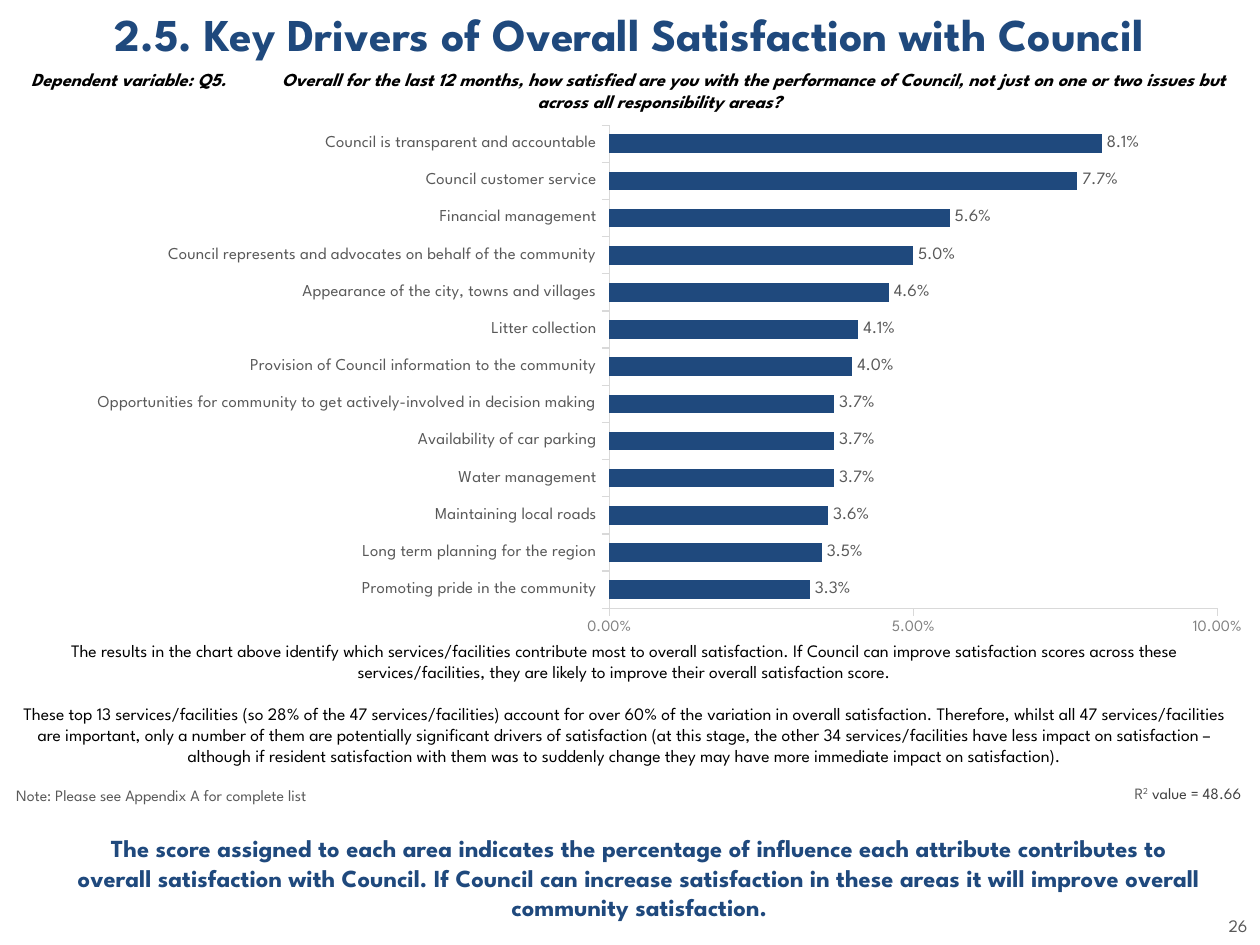
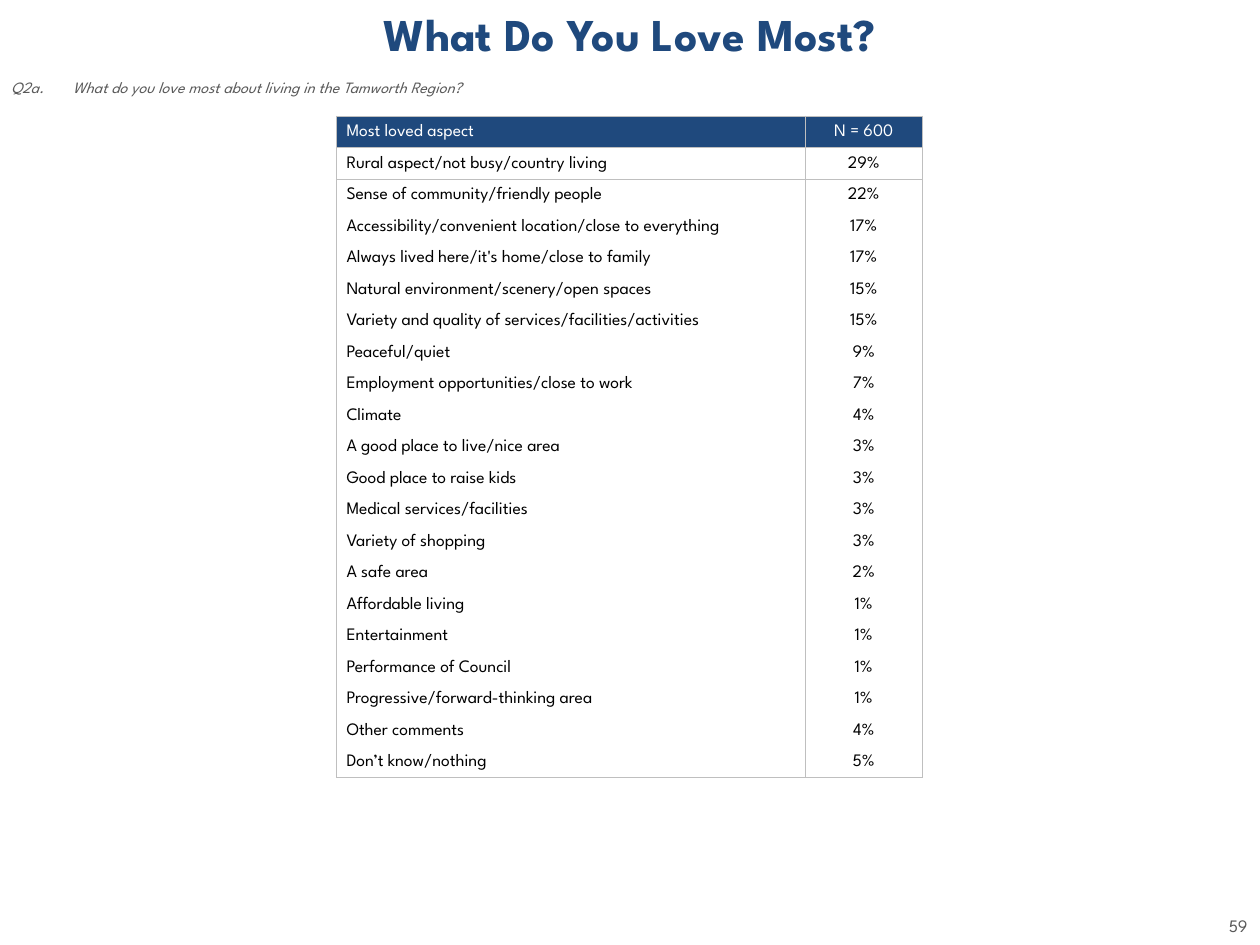
from dataclasses import dataclass
from typing import Any

from lxml import etree
from pptx import Presentation
from pptx import util as u
from pptx.chart.data import CategoryChartData
from pptx.dml.color import RGBColor
from pptx.enum import chart as charts, text
from pptx.oxml import parse_xml
from pptx.oxml.ns import nsdecls, qn

FONT = "League Spartan"
NAVY, BLACK, WHITE = "1F497D", "000000", "FFFFFF"
GREY, DARK_GREY, MID_GREY = "595959", "404040", "808080"
AXIS_GREY, BORDER_GREY = "D9D9D9", "BFBFBF"
LEFT, CENTER, RIGHT = text.PP_ALIGN.LEFT, text.PP_ALIGN.CENTER, text.PP_ALIGN.RIGHT
TOP, MIDDLE = text.MSO_ANCHOR.TOP, text.MSO_ANCHOR.MIDDLE
HANGING = 0.49
NO_STYLE_NO_GRID = "{2D5ABB26-0587-4C30-8999-92F81FD0307C}"


@dataclass(frozen=True)
class Style:
    size: float
    color: str = BLACK
    bold: bool = False
    italic: bool = False


@dataclass(frozen=True)
class Piece:
    words: str
    style: Style
    superscript: bool = False


@dataclass(frozen=True)
class Note:
    left: float
    top: float
    width: float
    height: float
    paragraphs: list[list[Piece]]
    align: Any = LEFT
    anchor: Any = TOP
    hanging: bool = False
    gap: float = 0


TITLE = Style(26, NAVY, bold=True)
QUESTION = Style(10.5, bold=True, italic=True)
SUBQUESTION = Style(9, GREY, italic=True)
BODY = Style(10)
SMALL = Style(9, GREY)
TAKEAWAY = Style(14, NAVY, bold=True)
PAGE_NUMBER = Style(10, GREY)

DRIVERS = [
    ("Council is transparent and accountable", 0.081),
    ("Council customer service", 0.077),
    ("Financial management", 0.056),
    ("Council represents and advocates on behalf of the community", 0.05),
    ("Appearance of the city, towns and villages", 0.046),
    ("Litter collection", 0.041),
    ("Provision of Council information to the community", 0.04),
    ("Opportunities for community to get actively-involved in decision making", 0.037),
    ("Availability of car parking", 0.037),
    ("Water management", 0.037),
    ("Maintaining local roads", 0.036),
    ("Long term planning for the region", 0.035),
    ("Promoting pride in the community", 0.033),
]

LOVED_ASPECTS = [
    ("Most loved aspect", "N = 600"),
    ("Rural aspect/not busy/country living", "29%"),
    ("Sense of community/friendly people", "22%"),
    ("Accessibility/convenient location/close to everything", "17%"),
    ("Always lived here/it's home/close to family", "17%"),
    ("Natural environment/scenery/open spaces", "15%"),
    ("Variety and quality of services/facilities/activities", "15%"),
    ("Peaceful/quiet", "9%"),
    ("Employment opportunities/close to work", "7%"),
    ("Climate", "4%"),
    ("A good place to live/nice area", "3%"),
    ("Good place to raise kids", "3%"),
    ("Medical services/facilities", "3%"),
    ("Variety of shopping", "3%"),
    ("A safe area", "2%"),
    ("Affordable living", "1%"),
    ("Entertainment", "1%"),
    ("Performance of Council", "1%"),
    ("Progressive/forward-thinking area", "1%"),
    ("Other comments", "4%"),
    ("Don’t know/nothing", "5%"),
]

DRIVER_NOTES = [
    Note(0.51, 6.43, 9.13, 1.07, [[Piece(
        "The score assigned to each area indicates the percentage of influence each attribute "
        "contributes to overall satisfaction with Council. If Council can increase satisfaction "
        "in these areas it will improve overall community satisfaction.", TAKEAWAY)]],
        CENTER, MIDDLE),
    Note(-0.01, 0.54, 10, 0.35, [[Piece(
        "Dependent variable: Q5.\tOverall for the last 12 months, how satisfied are you with the "
        "performance of Council, not just on one or two issues but across all responsibility "
        "areas?", QUESTION)]], CENTER, MIDDLE, hanging=True),
    Note(0.03, 6.19, 5.68, 0.26, [[Piece(
        "Note: Please see Appendix A for complete list", SMALL)]], hanging=True),
    Note(-0.01, 5.03, 9.92, 1.28, [
        [Piece(
            "The results in the chart above identify which services/facilities contribute most "
            "to overall satisfaction. If Council can improve satisfaction scores across these "
            "services/facilities, they are likely to improve their overall satisfaction score.",
            BODY)],
        [Piece(
            "These top 13 services/facilities (so 28% of the 47 services/facilities) account for "
            "over 60% of the variation in overall satisfaction. Therefore, whilst all 47 "
            "services/facilities are important, only a number of them are potentially significant "
            "drivers of satisfaction (at this stage, the other 34 services/facilities have less "
            "impact on satisfaction – although if resident satisfaction with them was to suddenly "
            "change they may have more immediate impact on satisfaction).", BODY)],
    ], CENTER, gap=12),
    Note(4.27, 6.17, 5.68, 0.26, [[
        Piece("R", SMALL),
        Piece("2", SMALL, superscript=True),
        Piece(" value = 48.66", Style(9, DARK_GREY)),
    ]], RIGHT, hanging=True),
]

LOVED_NOTE = Note(-0.01, 0.57, 10, 0.24, [[Piece(
    "Q2a.\tWhat do you love most about living in the Tamworth Region?", SUBQUESTION)]],
    anchor=MIDDLE, hanging=True)


def rgb(value: str) -> RGBColor:
    return RGBColor.from_string(value)


def set_values(target: Any, values: dict[str, Any]) -> None:
    for name, value in values.items():
        setattr(target, name, value)


def format_font(font: Any, style: Style) -> None:
    set_values(font, {"name": FONT, "size": u.Pt(style.size),
                      "bold": style.bold, "italic": style.italic})
    font.color.rgb = rgb(style.color)


def place(shape: Any, left: float, top: float, width: float, height: float) -> None:
    set_values(shape, {"left": u.Inches(left), "top": u.Inches(top),
                       "width": u.Inches(width), "height": u.Inches(height)})


def fill_paragraph(paragraph: Any, pieces: list[Piece], align: Any) -> None:
    paragraph.alignment = align
    for piece in pieces:
        run = paragraph.add_run()
        run.text = piece.words
        format_font(run.font, piece.style)
        if piece.superscript:
            run._r.get_or_add_rPr().set("baseline", "30000")


def fill_shape(shape: Any, note: Note) -> None:
    place(shape, note.left, note.top, note.width, note.height)
    frame = shape.text_frame
    set_values(frame, {"word_wrap": True, "auto_size": text.MSO_AUTO_SIZE.NONE,
                       "vertical_anchor": note.anchor})
    for index, pieces in enumerate(note.paragraphs):
        paragraph = frame.add_paragraph() if index else frame.paragraphs[0]
        fill_paragraph(paragraph, pieces, note.align)
        if index:
            paragraph.space_before = u.Pt(note.gap)
        if note.hanging:
            properties = paragraph._p.get_or_add_pPr()
            properties.set("marL", str(u.Inches(HANGING)))
            properties.set("indent", str(-u.Inches(HANGING)))


def add_note(slide: Any, note: Note) -> None:
    fill_shape(slide.shapes.add_textbox(0, 0, 0, 0), note)


def add_page(presentation: Any, title: str, number: str) -> Any:
    slide = presentation.slides.add_slide(presentation.slide_layouts[5])
    fill_shape(slide.shapes.title, Note(0, 0, 10, 0.55, [[Piece(title, TITLE)]], CENTER))
    add_note(slide, Note(9.57, 7.21, 0.43, 0.27, [[Piece(number, PAGE_NUMBER)]], RIGHT))
    return slide


def format_axis(axis: Any, style: Style) -> None:
    set_values(axis, {"has_major_gridlines": False,
                      "major_tick_mark": charts.XL_TICK_MARK.OUTSIDE,
                      "minor_tick_mark": charts.XL_TICK_MARK.NONE})
    format_font(axis.tick_labels.font, style)
    axis.format.line.color.rgb = rgb(AXIS_GREY)
    axis.format.line.width = u.Pt(0.75)


def set_plot_area(chart: Any, x: float, y: float, width: float, height: float) -> None:
    plot_area = chart._chartSpace.chart.plotArea
    for layout in plot_area.findall(qn("c:layout")):
        plot_area.remove(layout)
    layout = etree.Element(qn("c:layout"))
    manual = etree.SubElement(layout, qn("c:manualLayout"))
    values = {"layoutTarget": "inner", "xMode": "edge", "yMode": "edge",
              "x": x, "y": y, "w": width, "h": height}
    for name, value in values.items():
        etree.SubElement(manual, qn(f"c:{name}")).set("val", str(value))
    plot_area.insert(0, layout)


def add_driver_chart(slide: Any) -> None:
    data = CategoryChartData(number_format="0.0%")
    data.categories = [name for name, _ in reversed(DRIVERS)]
    data.add_series("Series 1", [share for _, share in reversed(DRIVERS)])
    chart = slide.shapes.add_chart(
        charts.XL_CHART_TYPE.BAR_CLUSTERED, u.Inches(0), u.Inches(0.89),
        u.Inches(9.95), u.Inches(4.15), data).chart
    set_values(chart, {"has_legend": False, "has_title": False})
    format_font(chart.font, BODY)

    format_axis(chart.category_axis, Style(9.5, GREY))
    format_axis(chart.value_axis, Style(9, MID_GREY))
    set_values(chart.value_axis, {"minimum_scale": 0, "maximum_scale": 0.1, "major_unit": 0.05})
    set_values(chart.value_axis.tick_labels,
               {"number_format": "0.00%", "number_format_is_linked": False})

    plot = chart.plots[0]
    set_values(plot, {"gap_width": 100, "vary_by_categories": False, "has_data_labels": True})
    fill = plot.series[0].format.fill
    fill.solid()
    fill.fore_color.rgb = rgb(NAVY)
    labels = plot.data_labels
    set_values(labels, {"show_value": True, "number_format": "0.0%",
                        "number_format_is_linked": False,
                        "position": charts.XL_LABEL_POSITION.OUTSIDE_END})
    format_font(labels.font, Style(10, GREY))
    set_plot_area(chart, 0.486, 0.025, 0.485, 0.928)


def set_borders(cell: Any, sides: str) -> None:
    properties = cell._tc.get_or_add_tcPr()
    for index, side in enumerate(sides):
        properties.insert(index, parse_xml(
            f'<a:ln{side} {nsdecls("a")} w="{u.Pt(0.5)}"><a:solidFill>'
            f'<a:srgbClr val="{BORDER_GREY}"/></a:solidFill></a:ln{side}>'))


def add_loved_table(slide: Any) -> None:
    row_height = 0.25
    last = len(LOVED_ASPECTS) - 1
    table = slide.shapes.add_table(
        len(LOVED_ASPECTS), 2, u.Inches(2.67), u.Inches(0.92),
        u.Inches(4.65), u.Inches(row_height * len(LOVED_ASPECTS))).table
    set_values(table, {"first_row": False, "horz_banding": False})
    table._tbl.tblPr.find(qn("a:tableStyleId")).text = NO_STYLE_NO_GRID
    for column, width in zip(table.columns, (3.72, 0.93)):
        column.width = u.Inches(width)
    for row, values in enumerate(LOVED_ASPECTS):
        table.rows[row].height = u.Inches(row_height)
        style = Style(10, BLACK if row else WHITE)
        sides = {0: "LRTB", 1: "LRT", last: "LRB"}.get(row, "LR")
        for column, (words, align, inset) in enumerate(
                zip(values, (LEFT, CENTER), (0.08, 0.01))):
            cell = table.cell(row, column)
            set_values(cell, {"vertical_anchor": MIDDLE, "margin_left": u.Inches(inset),
                              "margin_top": u.Inches(0.01), "margin_right": u.Inches(0.01),
                              "margin_bottom": 0})
            fill_paragraph(cell.text_frame.paragraphs[0], [Piece(words, style)], align)
            if row:
                cell.fill.background()
            else:
                cell.fill.solid()
                cell.fill.fore_color.rgb = rgb(NAVY)
            set_borders(cell, sides)


def main() -> None:
    presentation = Presentation()
    set_values(presentation, {"slide_width": u.Inches(10), "slide_height": u.Inches(7.5)})

    drivers = add_page(presentation, "2.5. Key Drivers of Overall Satisfaction with Council", "26")
    add_driver_chart(drivers)
    for note in DRIVER_NOTES:
        add_note(drivers, note)

    loved = add_page(presentation, "What Do You Love Most?", "59")
    add_note(loved, LOVED_NOTE)
    add_loved_table(loved)

    presentation.save("out.pptx")


if __name__ == "__main__":
    main()
